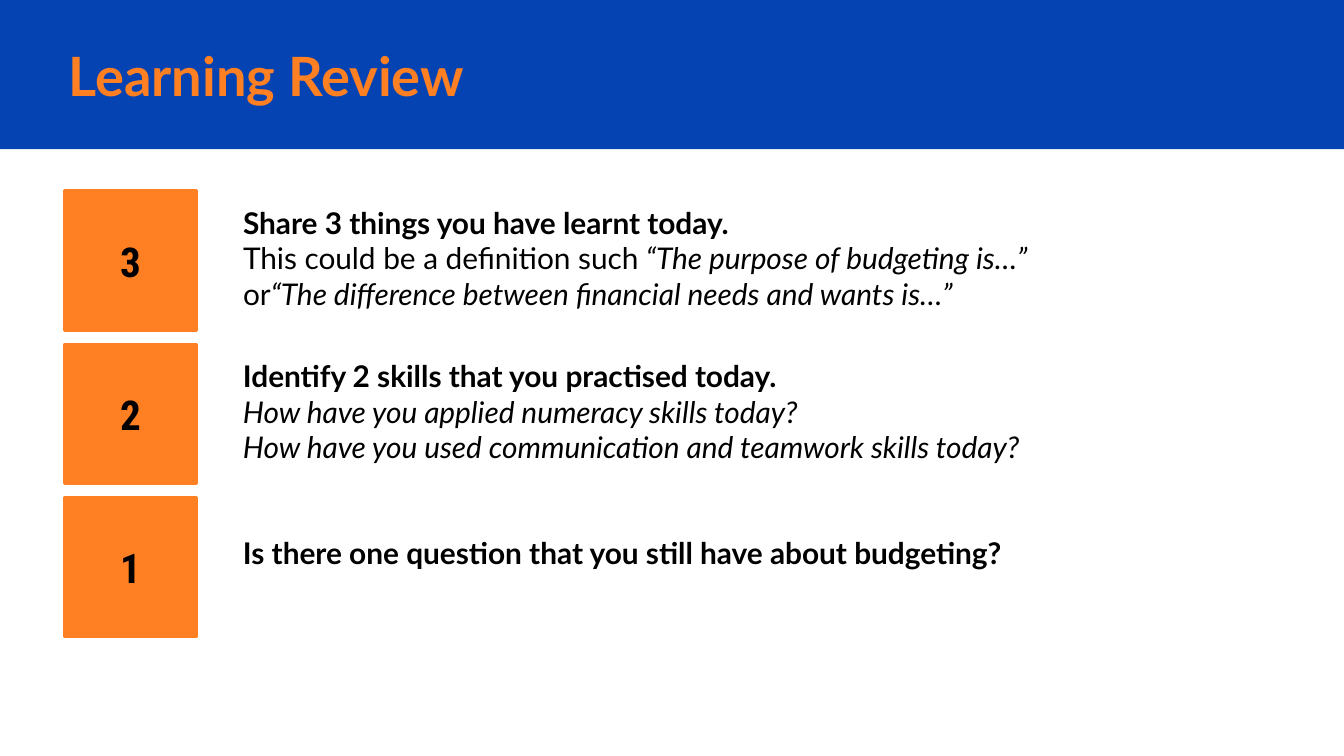
"""Build the Learning Review slide: a 3-2-1 reflection list under a title band."""
from pptx import Presentation
from pptx.dml.color import RGBColor
from pptx.enum.shapes import MSO_SHAPE
from pptx.enum.text import MSO_ANCHOR, MSO_AUTO_SIZE, PP_ALIGN
from pptx.util import Inches, Pt

RECT = MSO_SHAPE.RECTANGLE
TOP, MIDDLE = MSO_ANCHOR.TOP, MSO_ANCHOR.MIDDLE
LEFT, CENTER = PP_ALIGN.LEFT, PP_ALIGN.CENTER
NO_FIT = MSO_AUTO_SIZE.NONE
BLUE, ORANGE, BLACK = "0543B3", "FF8022", "000000"
BOLD, PLAIN, ITALIC = (True, False), (False, False), (False, True)

TITLE = "Learning Review"
ITEMS = [
    {"number": "3", "width": 6.61, "offset": 0, "height": 1.01, "text": [
        [("Share 3 things you have learnt today.", BOLD)],
        [("This could be a definition such", PLAIN),
         (" “The purpose of budgeting is…” ", ITALIC),
         ("or", PLAIN),
         ("“The difference between financial needs and wants is…”", ITALIC)]]},
    {"number": "2", "width": 7.26, "offset": 0, "height": 1.01, "text": [
        [("Identify 2 skills that you practised today.", BOLD)],
        [("How have you applied numeracy skills today?", ITALIC)],
        [("How have you used communication and teamwork skills today?", ITALIC)]]},
    {"number": "1", "width": 6.94, "offset": 0.18, "height": 0.47, "text": [
        [("Is there one question that you still have about budgeting?", BOLD)]]},
]
WIDTH = 10
HEIGHT = WIDTH * 9 / 16
BAND = 1.11
ROW_TOP, ROW_PITCH = 1.42, 1.14
BOX_LEFT, BOX_W, BOX_H, TEXT_LEFT = 0.48, 0.98, 1.04, 1.71


def rgb(value):
    return RGBColor.from_string(value)


def place(*lengths):
    return [Inches(v) for v in lengths]


def add_rect(s, box, color):
    sp = s.shapes.add_shape(RECT, *place(*box))
    sp.shadow.inherit = False
    sp.fill.solid()
    sp.fill.fore_color.rgb = rgb(color)
    return sp


def write(sp, paragraphs, size, font, color, align=LEFT, anchor=TOP):
    tf = sp.text_frame
    tf.word_wrap = True
    tf.auto_size = NO_FIT
    tf.vertical_anchor = anchor
    tf.margin_left = tf.margin_right = tf.margin_top = tf.margin_bottom = Inches(0.1)
    for i, runs in enumerate(paragraphs):
        p = tf.add_paragraph() if i else tf.paragraphs[0]
        p.alignment = align
        p.line_spacing = 1.0
        for text, (bold, italic) in runs:
            r = p.add_run()
            r.text = text
            r.font.name, r.font.size = font, Pt(size)
            r.font.bold, r.font.italic = bold, italic
            r.font.color.rgb = rgb(color)


def main():
    prs = Presentation()
    prs.slide_width, prs.slide_height = place(WIDTH, HEIGHT)
    s = prs.slides.add_slide(prs.slide_layouts[5])

    band = add_rect(s, (0, 0, WIDTH, BAND), BLUE)
    band.line.fill.background()
    title = s.shapes.title
    band._element.addnext(title._element)
    title.left, title.top, title.width, title.height = place(0.41, 0.28, 6.38, 0.56)
    write(title, [[(TITLE, BOLD)]], 29, "Lato", ORANGE, anchor=MIDDLE)

    for row, item in enumerate(ITEMS):
        top = ROW_TOP + row * ROW_PITCH
        box = add_rect(s, (BOX_LEFT, top, BOX_W, BOX_H), ORANGE)
        box.line.color.rgb = rgb(ORANGE)
        box.line.width = Pt(1.5)
        write(box, [[(item["number"], BOLD)]], 22, "Roboto Condensed", BLACK, CENTER, MIDDLE)
        text = s.shapes.add_textbox(
            *place(TEXT_LEFT, top + item["offset"], item["width"], item["height"]))
        write(text, item["text"], 16, "Lato", BLACK)

    prs.save("out.pptx")


if __name__ == "__main__":
    main()
